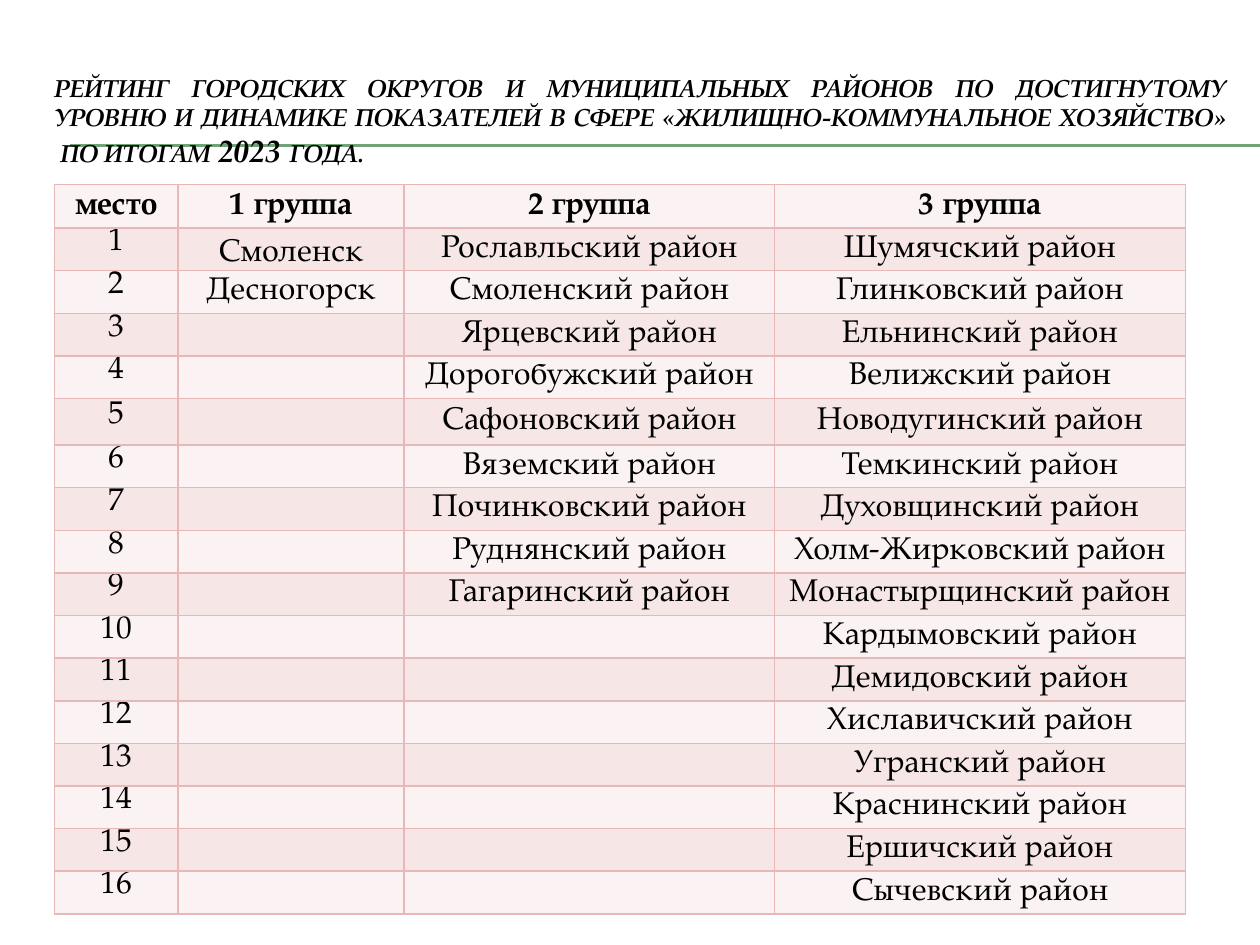
from lxml.etree import SubElement
from pptx import Presentation
from pptx.dml.color import RGBColor
from pptx.enum.shapes import MSO_CONNECTOR as Connector
from pptx.enum.text import MSO_ANCHOR as Anchor, PP_ALIGN as Align
from pptx.oxml import parse_xml
from pptx.oxml.ns import nsdecls, qn
from pptx.util import Pt

FONT = "TeX Gyre Pagella"
BLACK = RGBColor(0x00, 0x00, 0x00)
GREEN = RGBColor(0x72, 0xA3, 0x76)
PALE = RGBColor(0xFB, 0xF3, 0xF3)
ROSE = RGBColor(0xF6, 0xE6, 0xE6)
BORDER = RGBColor(0xE8, 0xB7, 0xB7)

TITLE_LINES = [
    "РЕЙТИНГ ГОРОДСКИХ ОКРУГОВ И МУНИЦИПАЛЬНЫХ РАЙОНОВ ПО ДОСТИГНУТОМУ УРОВНЮ "
    "И ДИНАМИКЕ ПОКАЗАТЕЛЕЙ В СФЕРЕ «ЖИЛИЩНО-КОММУНАЛЬНОЕ ХОЗЯЙСТВО»",
    " ПО ИТОГАМ",
]
HEADERS = ["место", "1 группа", "2 группа", "3 группа"]
CITIES = ["Смоленск", "Десногорск"]
SECOND_GROUP = [
    "Рославльский", "Смоленский", "Ярцевский", "Дорогобужский", "Сафоновский",
    "Вяземский", "Починковский", "Руднянский", "Гагаринский",
]
THIRD_GROUP = [
    "Шумячский", "Глинковский", "Ельнинский", "Велижский", "Новодугинский",
    "Темкинский", "Духовщинский", "Холм-Жирковский", "Монастырщинский",
    "Кардымовский", "Демидовский", "Хиславичский", "Угранский", "Краснинский",
    "Ершичский", "Сычевский",
]
COLUMN_WIDTHS = [70.6, 129.4, 211.7, 234.7]
HEADER_HEIGHT, ROW_HEIGHT, TALL_HEIGHT, TALL_ROW = 25, 24.35, 26.6, 5


def add_run(paragraph, text, size, bold=False, italic=False):
    run = paragraph.add_run()
    run.text = text
    font = run.font
    font.name, font.size = FONT, Pt(size)
    font.bold, font.italic = bold, italic
    font.color.rgb = BLACK


def add_rule(slide, top):
    rule = slide.shapes.add_connector(Connector.STRAIGHT, Pt(40.3), Pt(top), Pt(720), Pt(top))
    rule.line.color.rgb = GREEN
    rule.line.width = Pt(0.75)
    SubElement(rule._element.spPr, qn("a:effectLst"))


def add_title(slide):
    box = slide.shapes.add_textbox(Pt(23.8), Pt(36), Pt(684), Pt(66.2))
    frame = box.text_frame
    frame.word_wrap = True
    frame.vertical_anchor = Anchor.MIDDLE
    paragraph = frame.paragraphs[0]
    paragraph.alignment = Align.JUSTIFY
    subject, period = TITLE_LINES
    add_run(paragraph, subject, 14, True, True)
    paragraph.add_line_break()
    for text, size in [(period, 14), (" 2023 ", 18), ("ГОДА.", 14)]:
        add_run(paragraph, text, size, True, True)


def add_borders(cell):
    properties = cell._tc.get_or_add_tcPr()
    for index, side in enumerate("LRTB"):
        properties.insert(index, parse_xml(
            f'<a:ln{side} {nsdecls("a")} w="{Pt(1)}"><a:solidFill>'
            f'<a:srgbClr val="{BORDER}"/></a:solidFill></a:ln{side}>'))


def fill_cell(cell, text, color, bold=False, spacing=None, anchor=Anchor.MIDDLE):
    cell.fill.solid()
    cell.fill.fore_color.rgb = color
    add_borders(cell)
    cell.margin_left = cell.margin_right = cell.margin_top = Pt(0.7)
    cell.margin_bottom = Pt(0)
    cell.vertical_anchor = anchor
    if text:
        paragraph = cell.text_frame.paragraphs[0]
        paragraph.alignment = Align.CENTER
        paragraph.line_spacing = spacing
        add_run(paragraph, text, 18, bold)


def build_rows():
    """Return the header row followed by one row for each place."""
    rows = [HEADERS]
    for index, third in enumerate(THIRD_GROUP):
        city = CITIES[index] if index < len(CITIES) else ""
        second = f"{SECOND_GROUP[index]} район" if index < len(SECOND_GROUP) else ""
        rows.append([str(index + 1), city, second, f"{third} район"])
    return rows


def add_rating_table(slide):
    rows = build_rows()
    heights = [HEADER_HEIGHT] + [ROW_HEIGHT] * len(THIRD_GROUP)
    heights[TALL_ROW] = TALL_HEIGHT
    table = slide.shapes.add_table(
        len(rows), len(HEADERS), Pt(31), Pt(105.4),
        Pt(sum(COLUMN_WIDTHS)), Pt(sum(heights))).table
    for column, width in zip(table.columns, COLUMN_WIDTHS):
        column.width = Pt(width)
    for row_index, texts in enumerate(rows):
        table.rows[row_index].height = Pt(heights[row_index])
        color = ROSE if row_index % 2 else PALE
        for column_index, text in enumerate(texts):
            is_place = row_index > 0 and column_index == 0
            fill_cell(
                table.cell(row_index, column_index), text, color,
                bold=row_index == 0,
                spacing=Pt(11) if is_place else None,
                anchor=Anchor.BOTTOM if text == CITIES[0] else Anchor.MIDDLE)


def main():
    presentation = Presentation()
    presentation.slide_width, presentation.slide_height = Pt(720), Pt(540)
    slide = presentation.slides.add_slide(presentation.slide_layouts[6])
    for top in (82.8, 83.5):
        add_rule(slide, top)
    add_title(slide)
    add_rating_table(slide)
    presentation.save("out.pptx")


if __name__ == "__main__":
    main()
